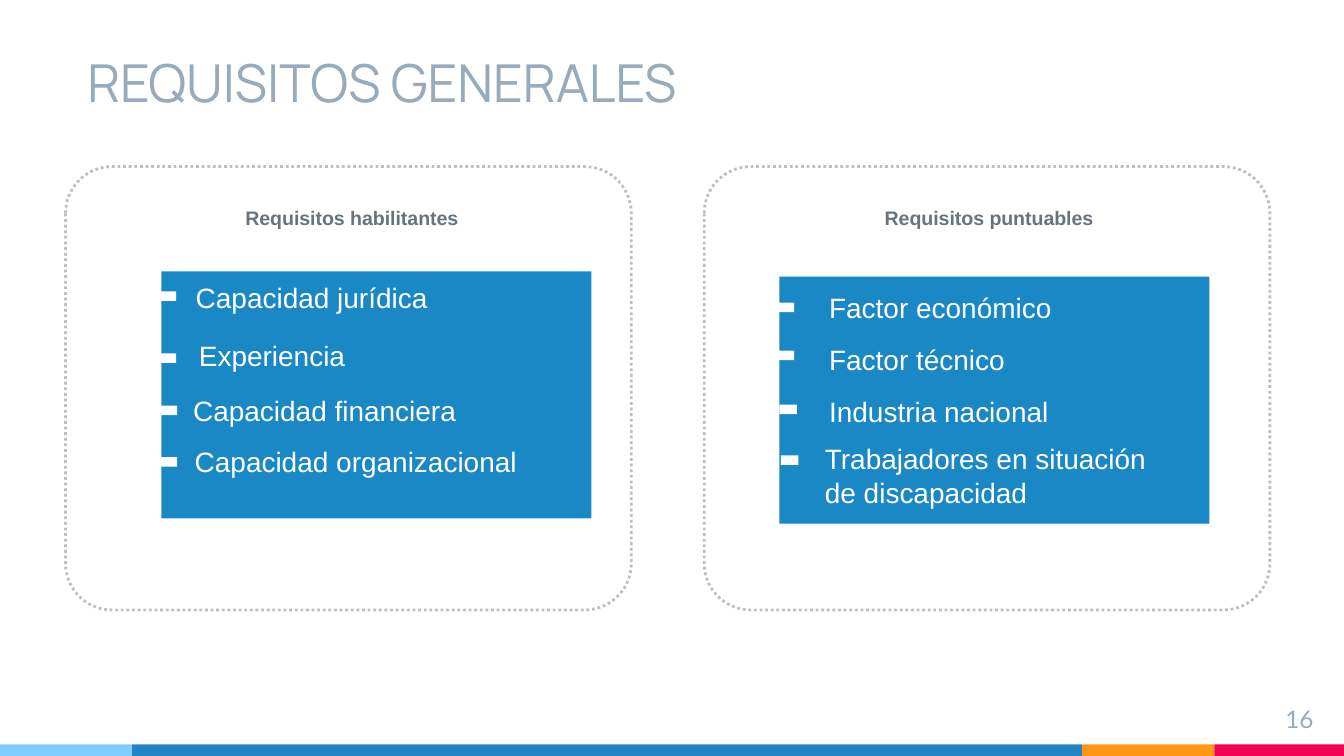
from pptx import Presentation
from pptx.dml.color import RGBColor
from pptx.enum import dml, shapes, text
from pptx.util import Cm, Pt

WHITE = RGBColor(0xFF, 0xFF, 0xFF)
SLATE = RGBColor(0x97, 0xAB, 0xBC)
HEADING_GREY = RGBColor(0x67, 0x74, 0x80)
BORDER_GREY = RGBColor(0xBF, 0xBF, 0xBF)
PANEL_BLUE = RGBColor(0x1A, 0x88, 0xC4)
SKY = RGBColor(0x7E, 0xCE, 0xFD)
BLUE = RGBColor(0x21, 0x85, 0xC5)
ORANGE = RGBColor(0xFF, 0x97, 0x15)
RED = RGBColor(0xF2, 0x02, 0x53)

TITLE = {"size": Pt(28), "name": "Manrope"}
NUMBER = {"size": Pt(13), "name": "Lato"}
HEADING = {"size": Pt(10.5), "name": "Arial", "bold": True}
ITEM = {"size": Pt(15), "name": "Arial"}
WIDE_INSETS = {
    side: Cm(0.25)
    for side in ("margin_left", "margin_top", "margin_right", "margin_bottom")
}
GROW = {"auto_size": text.MSO_AUTO_SIZE.SHAPE_TO_FIT_TEXT}

FOOTER = [(SKY, 2.5), (BLUE, 17.95), (ORANGE, 2.5), (RED, 2.45)]
CARDS = [
    {
        "heading": "Requisitos puntuables",
        "left": 13.31, "heading_left": 13.59, "panel": (14.73, 5.23),
        "items": [
            ("Factor económico", 15.42, 5.36, 4.9, False),
            ("Factor técnico", 15.42, 6.35, 4.01, False),
            ("Industria nacional", 15.42, 7.34, 4.72, False),
            ("Trabajadores en situación de discapacidad", 15.34, 8.23, 7.09, True),
        ],
        "marks": [(14.68, 5.72), (14.68, 6.63), (14.73, 7.65), (14.76, 8.61)],
    },
    {
        "heading": "Requisitos habilitantes",
        "left": 1.24, "heading_left": 1.55, "panel": (3.05, 5.13),
        "items": [
            ("Capacidad jurídica", 3.45, 5.18, 4.95, False),
            ("Experiencia", 3.51, 6.27, 3.3, False),
            ("Capacidad financiera", 3.4, 7.32, 5.54, False),
            ("Capacidad organizacional", 3.43, 8.28, 6.68, False),
        ],
        "marks": [(3.0, 5.51), (3.0, 6.68), (3.02, 7.67), (3.02, 8.64)],
    },
]


def set_all(target, values):
    for name, value in values.items():
        setattr(target, name, value)


def add_text(parent, words, place, font, color, align=None, **frame_format):
    box = parent.shapes.add_textbox(*map(Cm, place))
    set_all(box.text_frame, {"word_wrap": True, **frame_format})
    para = box.text_frame.paragraphs[0]
    para.alignment = align
    span = para.add_run()
    span.text = words
    set_all(span.font, font)
    span.font.color.rgb = color


def add_block(parent, place, color):
    block = parent.shapes.add_shape(
        shapes.MSO_SHAPE.RECTANGLE, *map(Cm, place))
    block.shadow.inherit = False
    block.fill.solid()
    block.fill.fore_color.rgb = color
    block.line.fill.background()


def add_outline(parent, place):
    outline = parent.shapes.add_shape(
        shapes.MSO_SHAPE.ROUNDED_RECTANGLE, *map(Cm, place))
    outline.adjustments[0] = 0.105
    outline.shadow.inherit = False
    outline.fill.background()
    outline.line.color.rgb = BORDER_GREY
    set_all(outline.line, {
        "width": Pt(1.5), "dash_style": dml.MSO_LINE.ROUND_DOT})


def add_card(page, card):
    group = page.shapes.add_group_shape()
    add_block(group, (*card["panel"], 8.13, 4.67), PANEL_BLUE)
    add_text(group, card["heading"], (card["heading_left"], 3.76, 10.21, 0.71),
             HEADING, HEADING_GREY, text.PP_ALIGN.CENTER, **GROW)
    add_outline(group, (card["left"], 3.15, 10.69, 8.38))
    for words, left, top, width, wraps in card["items"]:
        height = 1.55 if wraps else 0.89
        add_text(group, words, (left, top, width, height), ITEM, WHITE,
                 word_wrap=wraps, **GROW)
    for left, top in card["marks"]:
        add_block(group, (left, top, 0.33, 0.18), WHITE)


def add_footer(page):
    left = 0
    for color, width in FOOTER:
        add_block(page, (left, 14.07, width, 0.22), color)
        left += width


def main():
    deck = Presentation()
    set_all(deck, {"slide_width": Cm(25.4), "slide_height": Cm(14.29)})
    page = deck.slides.add_slide(deck.slide_layouts[6])
    add_footer(page)
    add_text(page, "REQUISITOS GENERALES", (1.4, 0, 22.17, 2.39), TITLE, SLATE,
             vertical_anchor=text.MSO_ANCHOR.BOTTOM, **WIDE_INSETS)
    add_text(page, "16", (23.55, 13.06, 1.52, 0.86), NUMBER, SLATE,
             text.PP_ALIGN.RIGHT, **WIDE_INSETS)
    for card in CARDS:
        add_card(page, card)
    deck.save("out.pptx")


if __name__ == "__main__":
    main()
